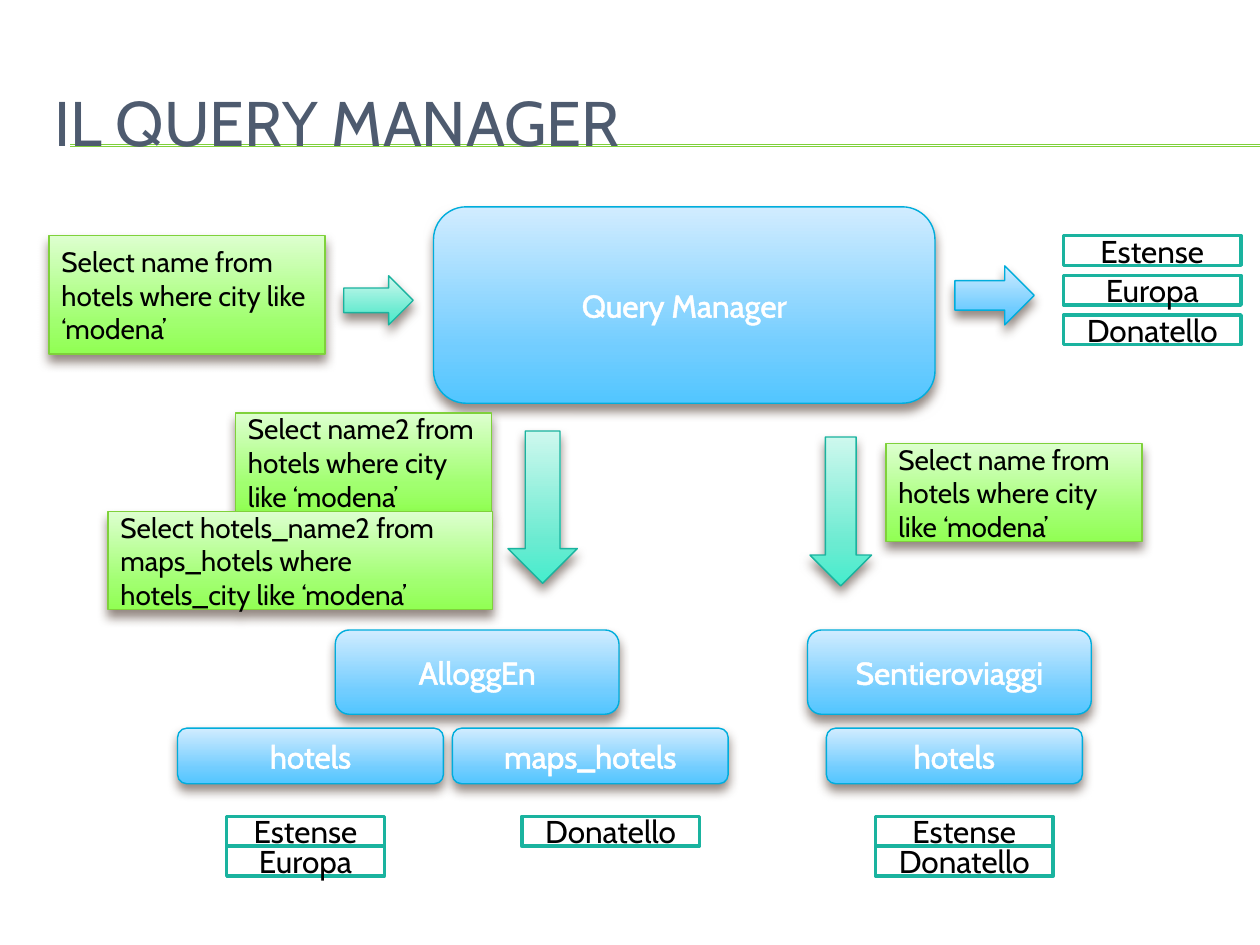
from collections import namedtuple

from lxml import etree
from pptx import Presentation
from pptx.dml.color import RGBColor
from pptx.enum.shapes import MSO_CONNECTOR, MSO_SHAPE
from pptx.enum.text import MSO_ANCHOR, MSO_AUTO_SIZE, PP_ALIGN
from pptx.oxml import parse_xml
from pptx.oxml.ns import qn
from pptx.util import Cm, Pt

RECTANGLE = MSO_SHAPE.RECTANGLE
ROUNDED = MSO_SHAPE.ROUNDED_RECTANGLE
PROCESS = MSO_SHAPE.FLOWCHART_ALTERNATE_PROCESS
RIGHT_ARROW = MSO_SHAPE.RIGHT_ARROW
DOWN_ARROW = MSO_SHAPE.DOWN_ARROW
STRAIGHT = MSO_CONNECTOR.STRAIGHT
MIDDLE = MSO_ANCHOR.MIDDLE
NO_AUTOFIT = MSO_AUTO_SIZE.NONE
LEFT, CENTER = PP_ALIGN.LEFT, PP_ALIGN.CENTER

FONT = "Cabin"
SLATE = RGBColor(0x4E, 0x5B, 0x6F)
WHITE = RGBColor(0xFF, 0xFF, 0xFF)
BLACK = RGBColor(0x00, 0x00, 0x00)
SHADOW = RGBColor(0x4E, 0x3B, 0x30)
BLUE_LINE = RGBColor(0x00, 0xAD, 0xDC)
GREEN_LINE = RGBColor(0x7F, 0xD1, 0x3B)
TEAL_LINE = RGBColor(0x1A, 0xB3, 0x9F)

Palette = namedtuple("Palette", "line top middle bottom")
BLUE = Palette(BLUE_LINE, RGBColor(0xD1, 0xEC, 0xFF),
               RGBColor(0x72, 0xCD, 0xFF), RGBColor(0x52, 0xC6, 0xFF))
GREEN = Palette(GREEN_LINE, RGBColor(0xDD, 0xFF, 0xCF),
                RGBColor(0xA1, 0xFF, 0x70), RGBColor(0x91, 0xFF, 0x53))
TEAL = Palette(TEAL_LINE, RGBColor(0xCE, 0xF8, 0xEE),
               RGBColor(0x6B, 0xEB, 0xD1), RGBColor(0x45, 0xED, 0xCD))

DRAWING = 'xmlns:a="http://schemas.openxmlformats.org/drawingml/2006/main"'
HIT_HEIGHT = 0.6
QUERY_HEIGHT = 1.98


def write(shape, text, size, color, align):
    frame = shape.text_frame
    frame.word_wrap = True
    frame.vertical_anchor = MIDDLE
    para = frame.paragraphs[0]
    para.text = text
    para.alignment = align
    para.font.name = FONT
    para.font.size = Pt(size)
    para.font.color.rgb = color
    return para


def add_glossy(page, kind, box, palette):
    """Add a shape with a vertical gradient and a soft shadow below it."""
    shape = page.shapes.add_shape(kind, *map(Cm, box))
    stops = "".join(
        f'<a:gs pos="{place}000"><a:srgbClr val="{color}"/></a:gs>'
        for place, color in zip((0, 72, 100), palette[1:]))
    properties = shape._element.spPr
    properties.append(parse_xml(
        f'<a:gradFill {DRAWING} rotWithShape="1"><a:gsLst>{stops}</a:gsLst>'
        '<a:lin ang="5400000" scaled="0"/></a:gradFill>'))
    shape.line.color.rgb = palette.line
    shape.line.width = Pt(0.79)
    properties.append(parse_xml(
        f'<a:effectLst {DRAWING}><a:outerShdw blurRad="{Pt(6)}" dist="{Pt(4)}" '
        f'dir="5400000" rotWithShape="0"><a:srgbClr val="{SHADOW}">'
        '<a:alpha val="60000"/></a:srgbClr></a:outerShdw></a:effectLst>'))
    return shape


def add_component(page, kind, box, name):
    """Add a blue block whose white label has a white outline."""
    para = write(add_glossy(page, kind, box, BLUE), name, 18, WHITE, CENTER)
    for span in para.runs:
        span._r.get_or_add_rPr().insert(0, parse_xml(
            f'<a:ln {DRAWING} w="{Pt(1.45)}"><a:solidFill>'
            f'<a:srgbClr val="{WHITE}"/></a:solidFill></a:ln>'))


def add_query(page, box, text):
    write(add_glossy(page, RECTANGLE, box, GREEN), text, 16, BLACK, LEFT)


def add_hits(page, left, top, width, pitch, names):
    for row, name in enumerate(names):
        box = (left, top + row * pitch, width, HIT_HEIGHT)
        hit = page.shapes.add_shape(RECTANGLE, *map(Cm, box))
        hit.shadow.inherit = False
        hit.fill.solid()
        hit.fill.fore_color.rgb = WHITE
        hit.line.color.rgb = TEAL_LINE
        hit.line.width = Pt(2)
        write(hit, name, 18, BLACK, CENTER)


def add_heading(page, box, text):
    left, top, width, height = box
    for offset in (1.65, 1.68):
        rule = page.shapes.add_connector(
            STRAIGHT, Cm(left + 0.58), Cm(top + offset), Cm(25.4), Cm(top + offset))
        rule.line.color.rgb = GREEN_LINE
        rule.line.width = Pt(0.75)
        etree.SubElement(rule._element.spPr, qn("a:effectLst"))
    title = page.shapes.title
    title.left, title.top, title.width, title.height = map(Cm, box)
    title.text_frame.auto_size = NO_AUTOFIT
    write(title, text, 36, SLATE, LEFT)
    page.shapes._spTree.append(title._element)  # in front of the rules


def add_manager_row(page, left, top):
    add_component(page, ROUNDED, (left + 7.75, top, 10.11, 3.96), "Query Manager")
    add_query(page, (left, top + 0.58, 5.56, 2.39),
              "Select name from hotels where city like ‘modena’")
    add_glossy(page, RIGHT_ARROW, (left + 5.94, top + 1.39, 1.4, 0.99), TEAL)
    add_glossy(page, RIGHT_ARROW, (left + 18.26, top + 1.19, 1.6, 1.19), BLUE)
    add_hits(page, left + 20.45, top + 0.58, 3.58, 0.8,
             ("Estense", "Europa", "Donatello"))


def add_source(page, left, top, name, name_offset, arrow, queries, tables):
    """Add one source: its arrow, its queries, its tables and their hits.

    arrow: box; queries: (x, y, width, text);
    tables: (x, width, name, hits x, hits width, hits).
    """
    x, y, width, height = arrow
    add_glossy(page, DOWN_ARROW, (left + x, top + y, width, height), TEAL)
    for x, y, width, text in queries:
        add_query(page, (left + x, top + y, width, QUERY_HEIGHT), text)
    add_component(page, PROCESS, (left + name_offset, top + 4.37, 5.72, 1.7), name)
    for x, width, table, hits_x, hits_width, hits in tables:
        add_component(page, PROCESS, (left + x, top + 6.35, width, 1.12), table)
        add_hits(page, left + hits_x, top + 8.13, hits_width, HIT_HEIGHT, hits)


def main():
    deck = Presentation()
    deck.slide_width, deck.slide_height = Cm(25.4), Cm(19.05)
    page = deck.slides.add_slide(deck.slide_layouts[5])
    add_heading(page, (0.84, 1.27, 24.13, 2.34), "IL QUERY MANAGER")
    add_manager_row(page, 0.99, 4.17)
    add_source(
        page, 2.18, 8.33, "AlloggEn", 4.58, (8.06, 0.36, 1.4, 3.07),
        [(2.57, 0, 5.16, "Select name2 from hotels where city like ‘modena’"),
         (0, QUERY_HEIGHT, 7.75,
          "Select hotels_name2 from maps_hotels where hotels_city like ‘modena’")],
        [(1.4, 5.36, "hotels", 2.39, 3.18, ("Estense", "Europa")),
         (6.94, 5.56, "maps_hotels", 8.34, 3.58, ("Donatello",))])
    add_source(
        page, 16.28, 8.33, "Sentieroviaggi", 0, (0.05, 0.48, 1.24, 3),
        [(1.58, 0.61, 5.16, "Select name from hotels where city like ‘modena’")],
        [(0.38, 5.16, "hotels", 1.37, 3.58, ("Estense", "Donatello"))])
    deck.save("out.pptx")


if __name__ == "__main__":
    main()
